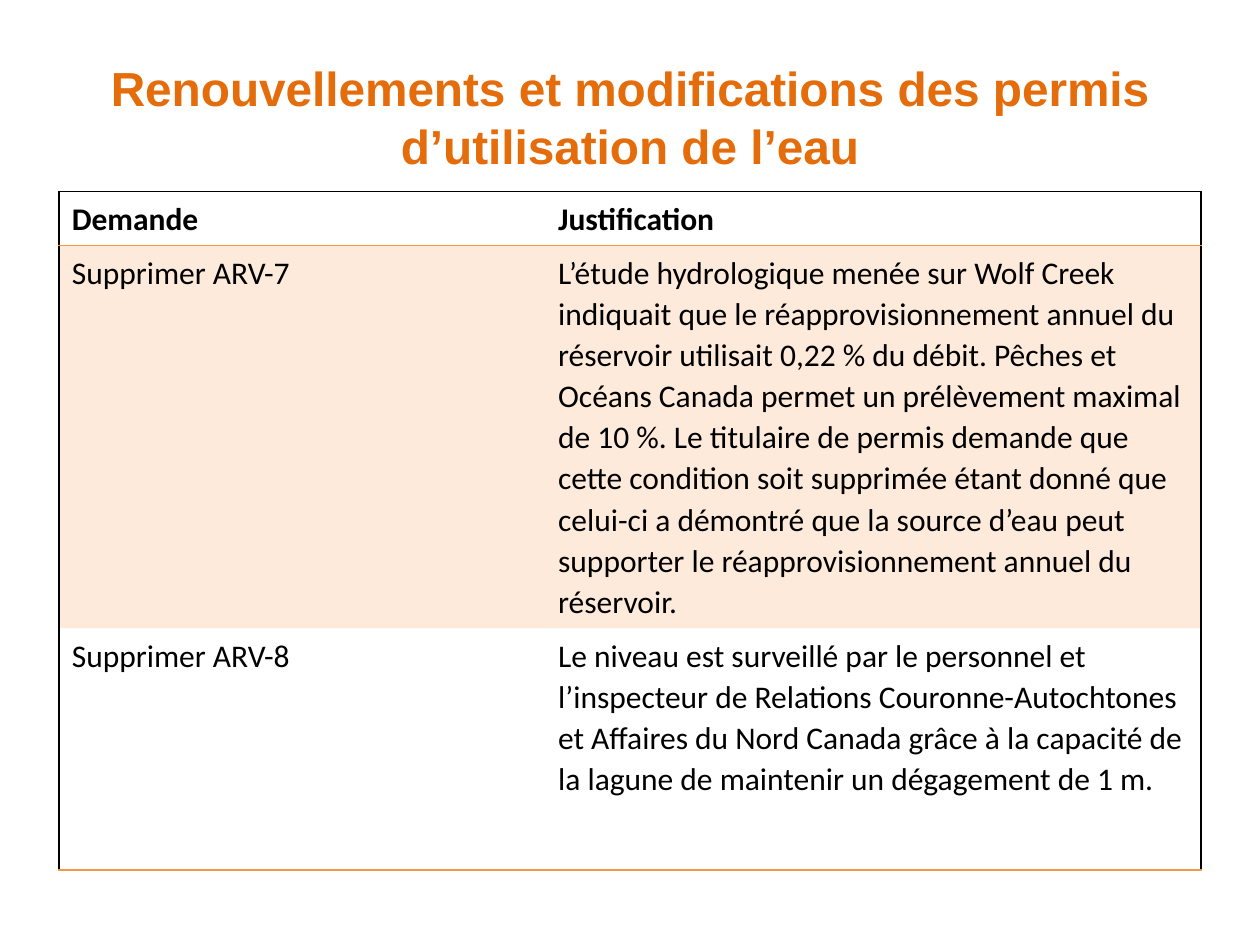
"""Builds a slide on water licence renewals with a two-column table of requests."""
from lxml.etree import SubElement
from pptx import Presentation
from pptx.dml.color import RGBColor
from pptx.enum.text import MSO_ANCHOR, MSO_AUTO_SIZE, PP_ALIGN
from pptx.oxml.ns import qn
from pptx.util import Inches, Pt

COLORS = {"title": "E46C0A", "text": "000000", "frame": "000000", "accent": "F79646"}
COLUMNS = [3.86, 5.2]
ROWS = [0.39, 2.52, 1.92]
REQUESTS = [
    ("Demande", "Justification"),
    ("Supprimer ARV-7",
     "L’étude hydrologique menée sur Wolf Creek indiquait que le réapprovisionnement annuel "
     "du réservoir utilisait 0,22 % du débit. Pêches et Océans Canada permet un prélèvement "
     "maximal de 10 %. Le titulaire de permis demande que cette condition soit supprimée "
     "étant donné que celui-ci a démontré que la source d’eau peut supporter le "
     "réapprovisionnement annuel du réservoir."),
    ("Supprimer ARV-8",
     "Le niveau est surveillé par le personnel et l’inspecteur de Relations "
     "Couronne-Autochtones et Affaires du Nord Canada grâce à la capacité de la lagune de "
     "maintenir un dégagement de 1 m."),
]


def set_border(cell, side, color):
    line = SubElement(cell._tc.get_or_add_tcPr(), qn(f"a:ln{side}"), w=str(Pt(1)))
    if color:
        fill = SubElement(line, qn("a:solidFill"))
        SubElement(fill, qn("a:srgbClr"), val=COLORS[color])
    else:
        SubElement(line, qn("a:noFill"))


def set_font(paragraph, name, size, bold, color):
    font = paragraph.font
    font.name, font.size, font.bold = name, Pt(size), bold
    font.color.rgb = RGBColor.from_string(COLORS[color])


deck = Presentation()
deck.slide_width, deck.slide_height = Inches(10), Inches(7.5)
page = deck.slides.add_slide(deck.slide_layouts[5])

title = page.shapes.title
title.left, title.top = 0, Inches(0.3)
title.width, title.height = deck.slide_width, Inches(1.25)
title.text_frame.text = "Renouvellements et modifications des permis d’utilisation de l’eau"
title.text_frame.word_wrap = True
title.text_frame.auto_size = MSO_AUTO_SIZE.NONE
title.text_frame.vertical_anchor = MSO_ANCHOR.MIDDLE
heading = title.text_frame.paragraphs[0]
heading.alignment = PP_ALIGN.CENTER
set_font(heading, "Arial", 27.3, True, "title")

table = page.shapes.add_table(len(ROWS), len(COLUMNS), Inches(0.47), Inches(1.52),
                              Inches(sum(COLUMNS)), Inches(sum(ROWS))).table
table.first_row = table.horz_banding = False
for column, width in zip(table.columns, COLUMNS):
    column.width = Inches(width)
for row, height in zip(table.rows, ROWS):
    row.height = Inches(height)

for row_index, request in enumerate(REQUESTS):
    is_header = row_index == 0
    is_shaded = row_index == 1
    for column_index, wording in enumerate(request):
        cell = table.cell(row_index, column_index)
        cell.text = wording
        para = cell.text_frame.paragraphs[0]
        para.line_spacing, para.space_after = 1.07, Pt(8)
        set_font(para, "Calibri", 18, is_header, "text")

        set_border(cell, "L", "frame" if column_index == 0 else None)
        set_border(cell, "R", "frame" if column_index == 1 else None)
        set_border(cell, "T", "frame" if is_header else "accent" if is_shaded else None)
        set_border(cell, "B", None if is_shaded else "accent")
        if is_shaded:
            cell.fill.solid()
            cell.fill.fore_color.rgb = RGBColor.from_string(COLORS["accent"])
            tint = cell._tc.tcPr.find(qn("a:solidFill")).find(qn("a:srgbClr"))
            SubElement(tint, qn("a:alpha"), val="20000")
        else:
            cell.fill.background()

deck.save("out.pptx")
